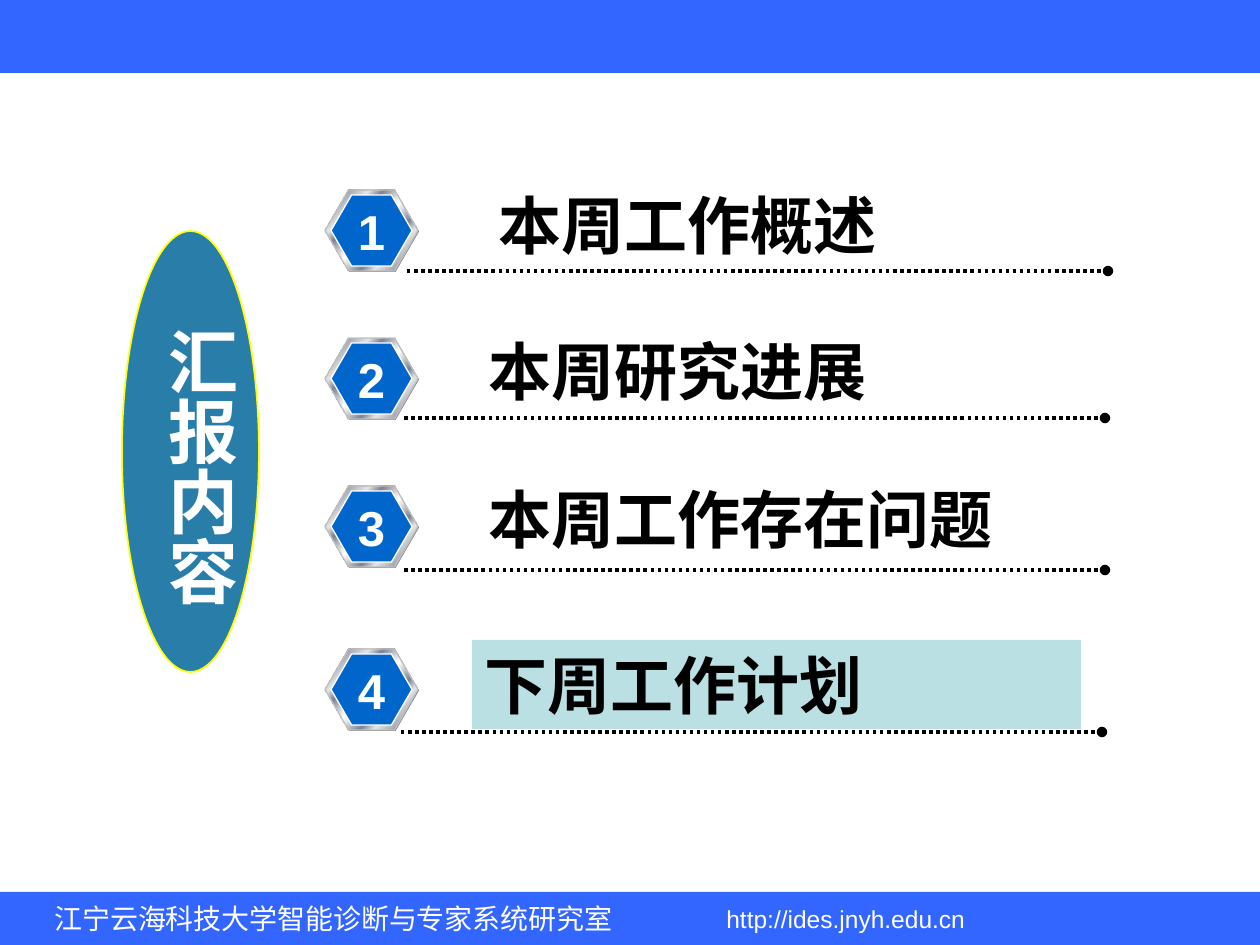
from lxml.etree import SubElement
from pptx import Presentation
from pptx.dml.color import RGBColor
from pptx.enum.dml import MSO_LINE
from pptx.enum.shapes import MSO_CONNECTOR, MSO_SHAPE
from pptx.enum.text import MSO_ANCHOR, PP_ALIGN
from pptx.oxml.ns import qn
from pptx.util import Emu, Pt

PX_PER_INCH = 126
BAND_BLUE = "3366FF"
WHITE = "FFFFFF"
BLACK = "000000"
METAL_STOPS = [
    (0, "E6E6E6"), (8, "7D8496"), (26, "E6E6E6"), (34, "7D8496"),
    (46, "E6E6E6"), (50, WHITE), (54, "E6E6E6"), (66, "7D8496"),
    (74, "E6E6E6"), (92, "7D8496"), (100, "E6E6E6"),
]
TOPICS = [
    ("本周工作概述", 486, 180, 190, 407, 271, None),
    ("本周研究进展", 476, 326, 338, 404, 418, None),
    ("本周工作存在问题", 476, 474, 486, 404, 570, None),
    ("下周工作计划", 472, 640, 649, 401, 732, "BBE0E3"),
]


def px(length):
    return Emu(round(length * 914400 / PX_PER_INCH))


def color(hex_value):
    return RGBColor.from_string(hex_value)


def add_block(shapes, kind, box, fill=None, line=None, width=0.75):
    block = shapes.add_shape(kind, *map(px, box))
    block.shadow.inherit = False
    if fill:
        block.fill.solid()
        block.fill.fore_color.rgb = color(fill)
    else:
        block.fill.background()
    if line:
        block.line.color.rgb = color(line)
        block.line.width = Pt(width)
    else:
        block.line.fill.background()
    return block


def write_text(holder, words, size, ink, bold=False, frame_format=None,
               align=PP_ALIGN.LEFT):
    frame = holder.text_frame
    defaults = {"word_wrap": True, "vertical_anchor": MSO_ANCHOR.TOP}
    for name, value in {**defaults, **(frame_format or {})}.items():
        setattr(frame, name, value)
    paragraph = frame.paragraphs[0]
    paragraph.alignment = align
    run = paragraph.add_run()
    run.text = words
    font_format = {"name": "Arial", "size": Pt(size), "bold": bold}
    for name, value in font_format.items():
        setattr(run.font, name, value)
    run.font.color.rgb = color(ink)


def add_label(shapes, box, words, size, ink, bold=False):
    label = shapes.add_textbox(*map(px, box))
    write_text(label, words, size, ink, bold)
    return label


def apply_metal(block):
    block.fill.gradient()
    block.fill.gradient_angle = 315
    stops = block.element.spPr.find(qn("a:gradFill")).find(qn("a:gsLst"))
    for stop in list(stops):
        stops.remove(stop)
    for percent, shade in METAL_STOPS:
        stop = SubElement(stops, qn("a:gs"), pos=str(percent * 1000))
        SubElement(stop, qn("a:srgbClr"), val=shade)


def add_badge(slide, top, number):
    shapes = slide.shapes.add_group_shape().shapes
    hexagon = MSO_SHAPE.HEXAGON
    shadow = add_block(shapes, hexagon, (326, top + 1, 93, 81), "808080")
    rim = add_block(shapes, hexagon, (325, top, 93, 81), line="C0C0C0")
    apply_metal(rim)
    face = add_block(shapes, hexagon, (331, top + 5, 81, 71), "0066CC", WHITE)
    for layer in (shadow, rim, face):
        layer.adjustments[0] = 0.29
    centered = {"word_wrap": False, "vertical_anchor": MSO_ANCHOR.MIDDLE}
    write_text(face, str(number), 28, WHITE, True, centered, PP_ALIGN.CENTER)


def add_dotted_rule(slide, left, y):
    rule = slide.shapes.add_connector(
        MSO_CONNECTOR.STRAIGHT, px(left), px(y), px(left + 701), px(y))
    rule.line.color.rgb = color(BLACK)
    rule.line.width = Pt(2)
    rule.line.dash_style = MSO_LINE.ROUND_DOT
    properties = rule.element.spPr
    SubElement(properties.find(qn("a:ln")), qn("a:tailEnd"), type="oval")
    SubElement(properties, qn("a:effectLst"))


def add_bands(slide):
    for box in ((0, 892, 1260, 53), (0, 0, 1260, 73)):
        add_block(slide.shapes, MSO_SHAPE.RECTANGLE, box, BAND_BLUE)
    add_label(slide.shapes, (42, 895, 640, 48),
              "江宁云海科技大学智能诊断与专家系统研究室", 16, WHITE)
    add_label(slide.shapes, (714, 898, 300, 44),
              "http://ides.jnyh.edu.cn", 14, WHITE)


def add_heading(slide):
    oval = add_block(slide.shapes, MSO_SHAPE.OVAL, (122, 231, 137, 441),
                     "006699", "FFFF00", 1)
    oval_color = oval.element.spPr.find(qn("a:solidFill"))[0]
    SubElement(oval_color, qn("a:alpha"), val="84000")
    heading = add_label(slide.shapes, (139, 315, 110, 325),
                        "汇报内容", 40, WHITE, True)
    heading.text_frame._txBody.bodyPr.set("vert", "eaVert")


def add_topic(slide, number, topic):
    title, left, top, badge_top, rule_left, rule_y, highlight = topic
    add_dotted_rule(slide, rule_left, rule_y)
    box = (left, top, 609, 89)
    if highlight:
        bar = add_block(slide.shapes, MSO_SHAPE.RECTANGLE, box, highlight)
        write_text(bar, title, 36, BLACK, True)
    else:
        add_label(slide.shapes, box, title, 36, BLACK, True)
    add_badge(slide, badge_top, number)


def main():
    deck = Presentation()
    deck.slide_width, deck.slide_height = px(1260), px(945)
    slide = deck.slides.add_slide(deck.slide_layouts[6])
    add_bands(slide)
    add_heading(slide)
    for number, topic in enumerate(TOPICS, 1):
        add_topic(slide, number, topic)
    deck.save("out.pptx")


if __name__ == "__main__":
    main()
